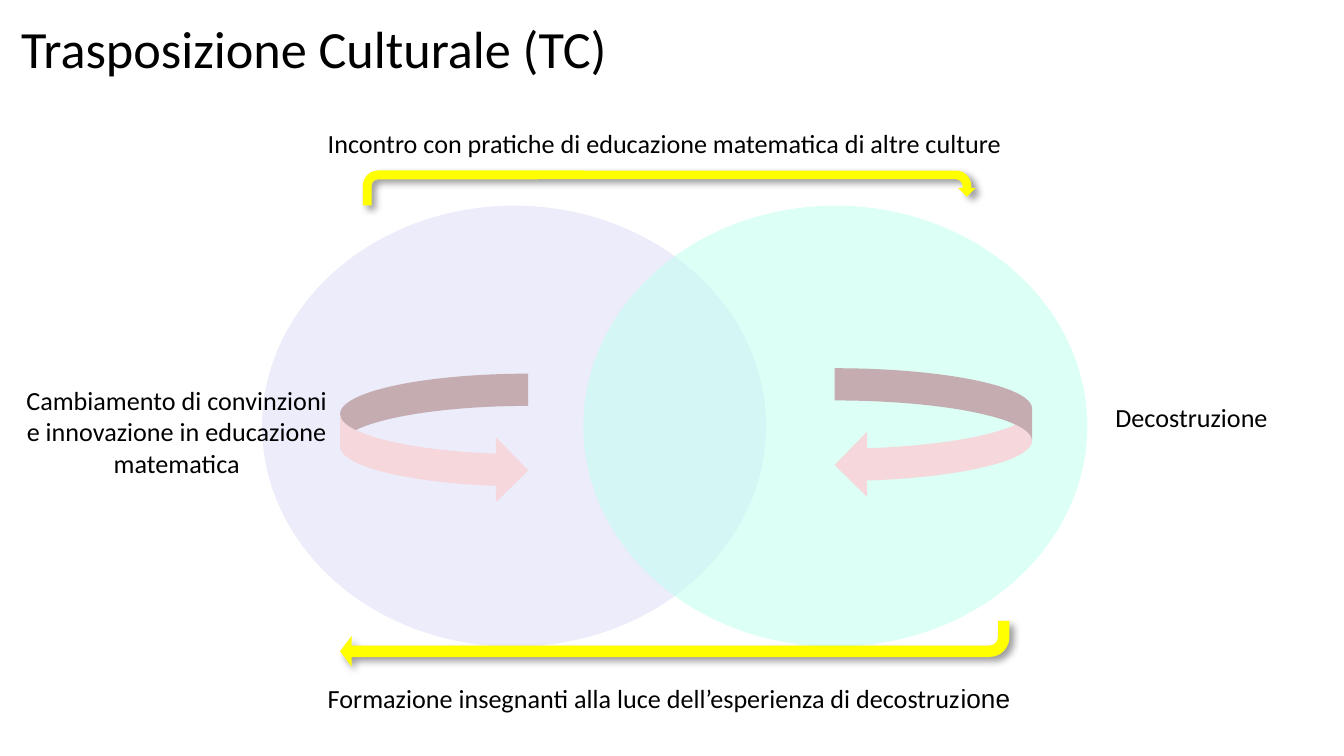
from dataclasses import dataclass
from lxml import etree
from pptx import Presentation
from pptx.dml.color import RGBColor
from pptx.enum.shapes import MSO_SHAPE as Shape
from pptx.enum.text import MSO_AUTO_SIZE as AutoSize, PP_ALIGN as Align
from pptx.oxml.ns import qn
from pptx.util import Pt


@dataclass(frozen=True)
class Theme:
    text: str = "000000"
    home_culture: str = "D6D6F5"
    other_culture: str = "C2FFF0"
    path_arrow: str = "FFFF00"
    inner_arrow: str = "F5D7DC"
    shadow: str = "000000"
    font: str = "Calibri"
    accent_font: str = "Arial"
    title_size: float = 28
    label_size: float = 14


THEME = Theme()


@dataclass(frozen=True)
class Box:
    left: float
    top: float
    width: float
    height: float

    def inner(self, left, top, width, height):
        return Box(self.left + left, self.top + top, width, height)

    def lengths(self):
        return [Pt(value) for value in (self.left, self.top, self.width, self.height)]


def add_text(slide, box, text, size=THEME.label_size, wrap=False, align=Align.LEFT):
    frame = slide.shapes.add_textbox(*box.lengths()).text_frame
    frame.word_wrap = wrap
    frame.auto_size = AutoSize.SHAPE_TO_FIT_TEXT
    paragraph = frame.paragraphs[0]
    paragraph.alignment = align
    paragraph.font.size = Pt(size)
    paragraph.font.name = THEME.font
    paragraph.font.color.rgb = RGBColor.from_string(THEME.text)
    paragraph.add_run().text = text
    return frame


def add_figure(slide, kind, box, color):
    shape = slide.shapes.add_shape(kind, *box.lengths())
    shape.shadow.inherit = False
    shape.line.fill.background()
    shape.fill.solid()
    shape.fill.fore_color.rgb = RGBColor.from_string(color)
    return shape


def set_alpha(color_element, percent):
    etree.SubElement(color_element, qn("a:alpha"), val=str(percent * 1000))


def add_shadow(shape):
    effects = shape.element.spPr.find(qn("a:effectLst"))
    shadow = etree.SubElement(
        effects, qn("a:outerShdw"), blurRad=str(Pt(4)), dist=str(Pt(3)),
        dir=str(45 * 60000), algn="tl", rotWithShape="0")
    set_alpha(etree.SubElement(shadow, qn("a:srgbClr"), val=THEME.shadow), 40)


def add_title(slide, box):
    frame = add_text(slide, box, "Trasposizione Culturale (TC)", THEME.title_size, wrap=True)
    frame.auto_size = AutoSize.NONE
    frame.margin_top = frame.margin_bottom = Pt(7.2)


def add_cultures(slide, box):
    diameter = 270
    for left, color, alpha in (
        (0, THEME.home_culture, 46),
        (box.width - diameter, THEME.other_culture, 57),
    ):
        circle = add_figure(slide, Shape.OVAL, box.inner(left, 0, diameter, box.height), color)
        set_alpha(circle.element.spPr.find(".//" + qn("a:srgbClr")), alpha)


def add_cycle(slide, box):
    encounter = add_figure(slide, Shape.U_TURN_ARROW,
                           box.inner(12.2, 0, 328.3, 18.7), THEME.path_arrow)
    add_figure(slide, Shape.CURVED_LEFT_ARROW,
               box.inner(264.9, 105.9, 105.8, 69.1), THEME.inner_arrow)
    add_figure(slide, Shape.CURVED_RIGHT_ARROW,
               box.inner(0, 108.8, 100.8, 69.1), THEME.inner_arrow)
    training = add_figure(slide, Shape.BENT_ARROW,
                          box.inner(0, 241.2, 358.6, 24.5), THEME.path_arrow)
    training.rotation = 180
    for index, value in enumerate((0.25, 0.334, 0.25, 0.438)):
        training.adjustments[index] = value
    for arrow in (encounter, training):
        add_shadow(arrow)


def add_labels(slide, box):
    add_text(slide, box.inner(164.2, 0, 380.9, 24.5),
             "Incontro con pratiche di educazione matematica di altre culture")
    training = add_text(slide, box.inner(164.2, 297.4, 385.2, 24.5),
                        "Formazione insegnanti alla luce dell’esperienza di decostruz")
    ending = training.paragraphs[0].add_run()
    ending.text = "ione"
    ending.font.name = THEME.accent_font
    add_text(slide, box.inner(586.1, 146.9, 97.2, 24.5), "Decostruzione")
    add_text(slide, box.inner(0, 137.5, 180.7, 58.3),
             "Cambiamento di convinzioni e innovazione in educazione matematica",
             wrap=True, align=Align.CENTER)


def main():
    presentation = Presentation()
    presentation.slide_width = Pt(720)
    presentation.slide_height = Pt(405)
    slide = presentation.slides.add_slide(presentation.slide_layouts[6])
    add_title(slide, Box(4.3, 1.4, 388.8, 46.1))
    add_cultures(slide, Box(140.4, 110.2, 442.1, 236.2))
    add_cycle(slide, Box(182.2, 91.4, 370.7, 265.7))
    add_labels(slide, Box(4.3, 64.8, 683.3, 321.9))
    presentation.save("out.pptx")


if __name__ == "__main__":
    main()
